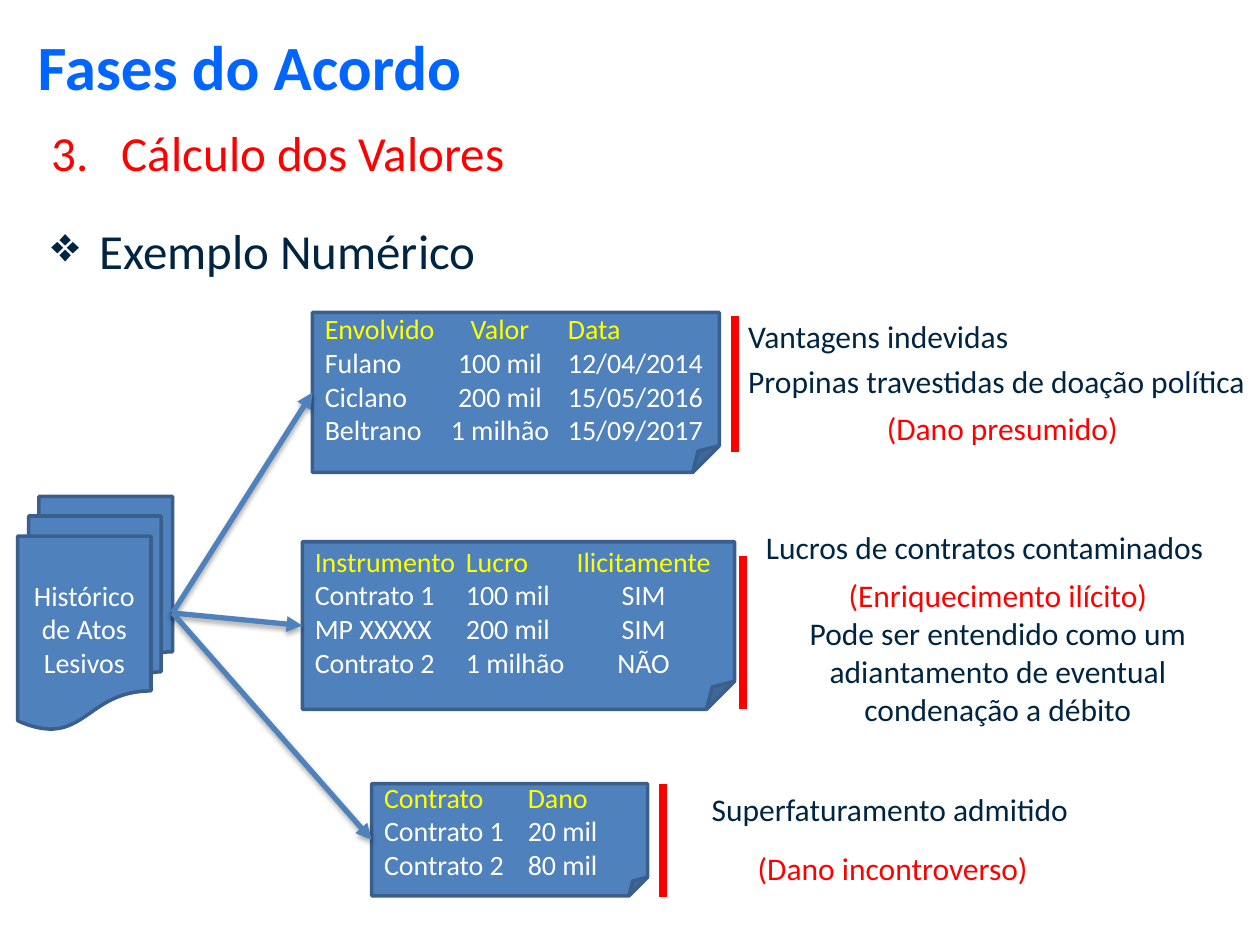
from lxml.etree import SubElement
from pptx import Presentation
from pptx.dml.color import RGBColor
from pptx.enum.shapes import MSO_CONNECTOR, MSO_SHAPE
from pptx.enum.text import MSO_ANCHOR, PP_ALIGN
from pptx.oxml.ns import qn
from pptx.util import Inches, Pt

BLUE, EDGE, RED, NAVY = "4F81BD", "3A5F8C", "FF0000", "002543"
WHITE, GOLD = "FFFFFF", "FFFF00"
MID, LEFT = PP_ALIGN.CENTER, PP_ALIGN.LEFT

deck = Presentation()
deck.slide_width, deck.slide_height = Inches(10), Inches(7.5)
slide = deck.slides.add_slide(deck.slide_layouts[6])
shapes = slide.shapes
hue = RGBColor.from_string


def write(shape, lines, size, bold=False):
    frame = shape.text_frame
    frame.word_wrap = True
    for row, (text, color, align, gap) in enumerate(lines):
        para = frame.paragraphs[0] if row == 0 else frame.add_paragraph()
        for key, val in {"alignment": align, "space_before": Pt(gap)}.items():
            setattr(para, key, val)
        run = para.add_run()
        run.text = text
        look = {"name": "Calibri", "size": Pt(size), "bold": bold}
        for key, val in look.items():
            setattr(run.font, key, val)
        run.font.color.rgb = hue(color)
    return frame


def block(kind, box, lines):
    shape = shapes.add_shape(kind, *map(Inches, box))
    shape.shadow.inherit = False
    shape.fill.solid()
    shape.fill.fore_color.rgb = hue(BLUE)
    shape.line.color.rgb = hue(EDGE)
    shape.line.width = Pt(2)
    write(shape, lines, 16).vertical_anchor = MSO_ANCHOR.MIDDLE
    return shape


source = block(MSO_SHAPE.FLOWCHART_MULTIDOCUMENT, (0.14, 3.94, 1.23, 1.85),
               [("Histórico de Atos Lesivos", WHITE, MID, 0)])

for x, top, end in [(5.83, 2.51, 3.59), (5.9, 4.41, 5.63), (5.26, 6.22, 7.12)]:
    bar = shapes.add_connector(MSO_CONNECTOR.STRAIGHT, *map(Inches, (x, top, x, end)))
    bar.line.color.rgb = hue(RED)
    bar.line.width = Pt(4.5)
    SubElement(bar._element.spPr, qn("a:effectLst"))

cards = [
    ((2.48, 2.48, 3.23, 1.27), [(1.39, "ctr"), (1.93, "l")],
     [("Envolvido", "Valor", "Data"),
      ("Fulano", "100 mil", "12/04/2014"),
      ("Ciclano", "200 mil", "15/05/2016"),
      ("Beltrano", "1 milhão", "15/09/2017")]),
    ((2.4, 4.3, 3.43, 1.33), [(1.2, "l"), (2.61, "ctr")],
     [("Instrumento", "Lucro", "Ilicitamente"),
      ("Contrato 1", "100 mil", "SIM"),
      ("MP XXXXX", "200 mil", "SIM"),
      ("Contrato 2", "1 milhão", "NÃO")]),
    ((2.95, 6.22, 2.19, 0.89), [(1.14, "l")],
     [("Contrato", "Dano"),
      ("Contrato 1", "20 mil"),
      ("Contrato 2", "80 mil")]),
]
for box, stops, rows in cards:
    lines = [("\t".join(row), WHITE if n else GOLD, LEFT, 0) for n, row in enumerate(rows)]
    card = block(MSO_SHAPE.FOLDED_CORNER, box, lines)
    for para in card.text_frame.paragraphs:
        tabs = SubElement(para._p.get_or_add_pPr(), qn("a:tabLst"))
        for spot, align in stops:
            SubElement(tabs, qn("a:tab"), pos=str(Inches(spot)), algn=align)

    arrow = shapes.add_connector(MSO_CONNECTOR.STRAIGHT, 0, 0, 0, 0)
    arrow.begin_connect(source, 3)
    arrow.end_connect(card, 1)
    arrow.line.color.rgb = hue(BLUE)
    arrow.line.width = Pt(3)
    SubElement(arrow.line._get_or_add_ln(), qn("a:tailEnd"), type="triangle")
    glow = SubElement(arrow._element.spPr, qn("a:effectLst"))
    shade = SubElement(glow, qn("a:outerShdw"), blurRad=str(Pt(3.1)),
                       dist=str(Pt(1.8)), dir="5400000", rotWithShape="0")
    black = SubElement(shade, qn("a:srgbClr"), val="000000")
    SubElement(black, qn("a:alpha"), val="35000")

notes = [
    ((5.84, 2.47, 4.23, 1.16),
     [("Vantagens indevidas", NAVY, LEFT, 0),
      ("Propinas travestidas de doação política", NAVY, LEFT, 3.7),
      ("(Dano presumido)", RED, MID, 5.5)]),
    ((5.98, 4.14, 3.88, 1.7),
     [("Lucros de contratos contaminados", NAVY, LEFT, 0),
      ("(Enriquecimento ilícito)", RED, MID, 6),
      ("Pode ser entendido como um adiantamento de eventual condenação a débito",
       NAVY, MID, 0)]),
    ((5.55, 6.22, 3.07, 0.88),
     [("Superfaturamento admitido", NAVY, LEFT, 0),
      ("(Dano incontroverso)", RED, MID, 12)]),
]
for box, lines in notes:
    write(shapes.add_textbox(*map(Inches, box)), lines, 18)

title = shapes.add_textbox(*map(Inches, (0.2, 0.17, 4.62, 0.55)))
write(title, [("Fases do Acordo", "0066FF", LEFT, 0)], 36, True)

heads = [
    ((0.31, 0.92, 9.46, 0.45), "Cálculo dos Valores", RED, 0.56,
     "a:buAutoNum", {"type": "arabicPeriod", "startAt": "3"}),
    ((0.31, 1.7, 7.86, 0.45), "Exemplo Numérico", NAVY, 0.38,
     "a:buChar", {"char": "❖"}),
]
for box, text, color, dent, tag, mark in heads:
    head = shapes.add_textbox(*map(Inches, box))
    para = write(head, [(text, color, LEFT, 0)], 28).paragraphs[0]
    props = para._p.get_or_add_pPr()
    props.set("marL", str(Inches(dent)))
    props.set("indent", str(-Inches(dent)))
    SubElement(props, qn(tag), mark)

deck.save("out.pptx")
